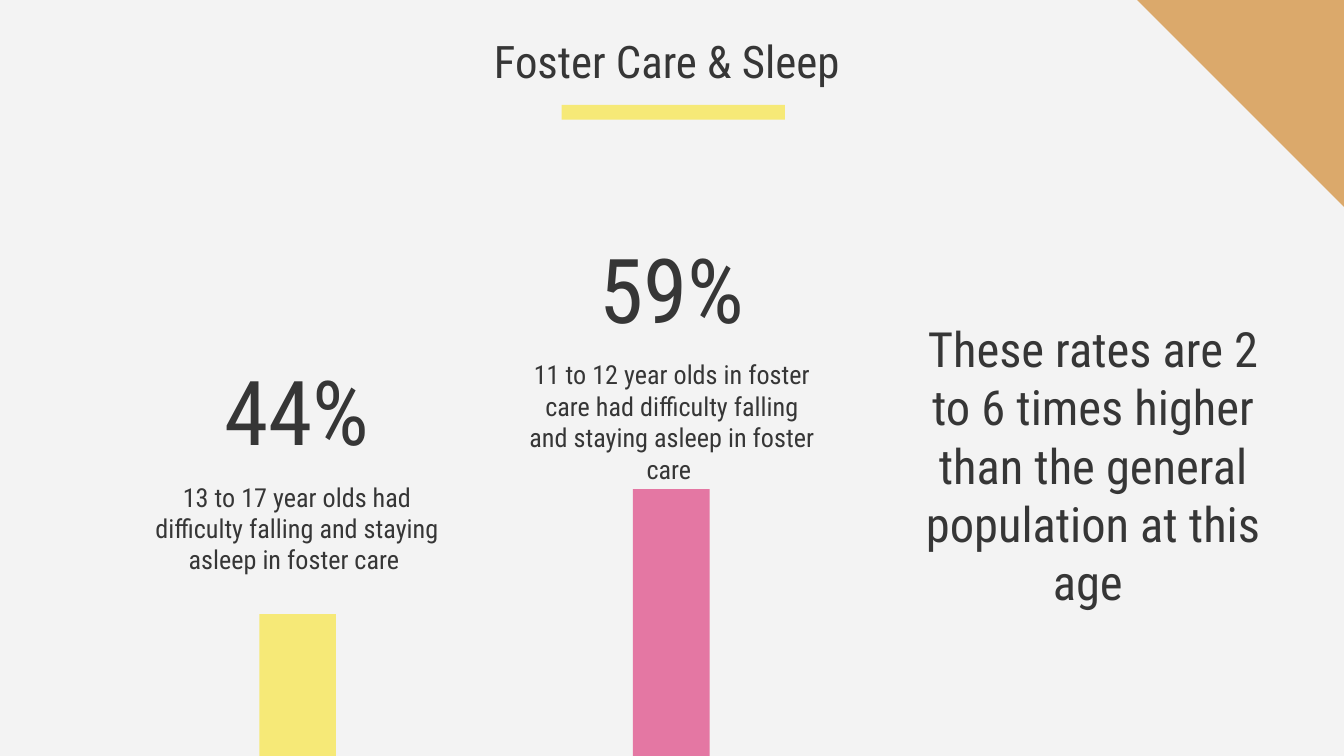
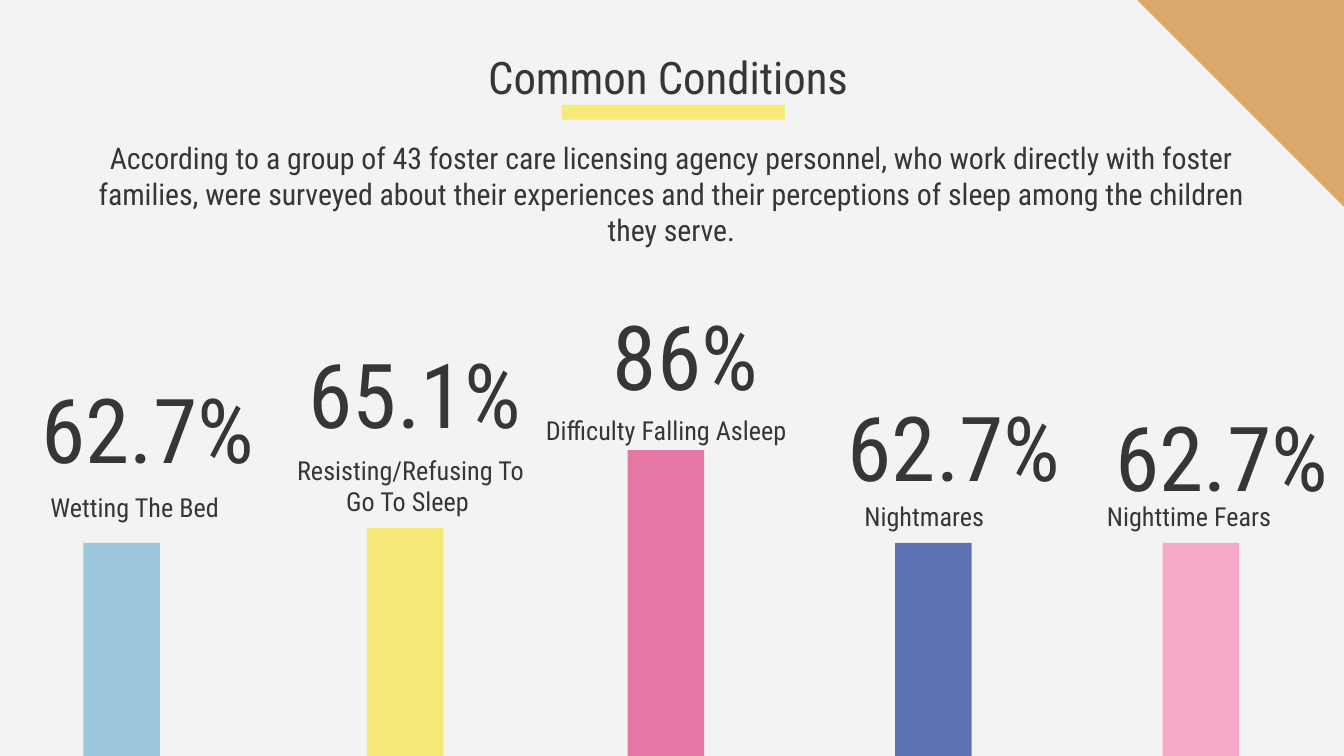
"""Build two slides on sleep difficulties among children in foster care."""
from pptx import Presentation
from pptx.dml.color import RGBColor
from pptx.enum.shapes import MSO_SHAPE
from pptx.enum.text import MSO_ANCHOR, MSO_AUTO_SIZE, PP_ALIGN
from pptx.util import Inches, Pt

WIDTH = 10
HEIGHT = WIDTH * 9 / 16
FONT = "Roboto Condensed"
INK, PAPER, TAN = "363636", "F3F3F3", "DBA96B"
YELLOW, ROSE, SKY, BLUE, PINK = "F6E977", "E477A3", "9CC6DE", "5C72B4", "F7A7C7"
CORNER = 1.54
BAR_WIDTH = 0.57
VALUE_SIZE = (2.34, 1.13)
LABEL_HEIGHT = 0.84

SLIDES = [
    {
        "title": ("Foster Care & Sleep ", 0.34, 0.15),
        "stats": [
            ("44%", 1.04, 2.42,
             "13 to 17 year olds had difficulty falling and staying asleep in foster care ",
             1.04, 3.48, 2.34, 1.93, 4.57, YELLOW),
            ("59%", 3.83, 1.51,
             "11 to 12 year olds in foster care had difficulty falling "
             "and staying asleep in foster care ",
             3.83, 2.57, 2.34, 4.71, 3.64, ROSE),
        ],
        "note": ("These rates are 2 to 6 times higher than the general population at this age ",
                 (6.71, 2.36, 2.85, 2.28), 26, MSO_ANCHOR.BOTTOM),
    },
    {
        "title": ("Common Conditions ", 0.35, 0.27),
        "stats": [
            ("62.7%", -0.07, 2.55, "Wetting The Bed ", -0.03, 3.56, 2.11, 0.62, 4.04, SKY),
            ("65.1%", 1.92, 2.29, "Resisting/Refusing To Go To Sleep ",
             2, 3.28, 2.11, 2.73, 3.93, YELLOW),
            ("86%", 3.93, 2.01, "Difficulty Falling Asleep ",
             3.81, 2.98, 2.34, 4.67, 3.35, ROSE),
            ("62.7%", 5.93, 2.69, "Nightmares ", 5.73, 3.62, 2.34, 6.66, 4.04, BLUE),
            ("62.7%", 7.92, 2.76, "Nighttime Fears ", 7.7, 3.62, 2.34, 8.65, 4.04, PINK),
        ],
        "note": ("According to a group of 43 foster care licensing agency personnel, who work "
                 "directly with foster families, were surveyed about their experiences and "
                 "their perceptions of sleep among the children they serve.",
                 (0.62, 0.94, 8.75, 0.53), 16, MSO_ANCHOR.TOP),
    },
]


def rgb(value):
    return RGBColor.from_string(value)


def add_block(s, kind, box, color, rotation=0):
    sp = s.shapes.add_shape(kind, *map(Inches, box))
    sp.shadow.inherit = False
    sp.fill.solid()
    sp.fill.fore_color.rgb = rgb(color)
    sp.line.fill.background()
    sp.rotation = rotation


def write(s, text, box, size=14, anchor=MSO_ANCHOR.TOP, sp=None):
    sp = sp or s.shapes.add_textbox(*map(Inches, box))
    sp.left, sp.top, sp.width, sp.height = map(Inches, box)
    tf = sp.text_frame
    tf.word_wrap = True
    tf.auto_size = MSO_AUTO_SIZE.NONE
    tf.vertical_anchor = anchor
    tf.margin_left = tf.margin_top = tf.margin_right = tf.margin_bottom = Inches(0.1)
    p = tf.paragraphs[0]
    p.alignment = PP_ALIGN.CENTER
    r = p.add_run()
    r.text = text
    r.font.size = Pt(size)
    r.font.name = FONT
    r.font.color.rgb = rgb(INK)


def add_stat(s, value, value_left, value_top, label, label_left, label_top, label_width,
             bar_left, bar_top, color):
    write(s, value, (value_left, value_top, *VALUE_SIZE), size=48, anchor=MSO_ANCHOR.BOTTOM)
    write(s, label, (label_left, label_top, label_width, LABEL_HEIGHT))
    add_block(s, MSO_SHAPE.RECTANGLE,
              (bar_left, bar_top, BAR_WIDTH, HEIGHT - bar_top), color)


def add_slide(prs, content):
    s = prs.slides.add_slide(prs.slide_layouts[5])
    add_block(s, MSO_SHAPE.RIGHT_TRIANGLE, (WIDTH - CORNER, 0, CORNER, CORNER), TAN, rotation=180)
    add_block(s, MSO_SHAPE.RECTANGLE, (4.18, 0.78, 1.66, 0.11), YELLOW)
    title, left, top = content["title"]
    write(s, title, (left, top, 9.32, 0.63), size=24, sp=s.shapes.title)
    for stat in content["stats"]:
        add_stat(s, *stat)
    note, box, size, anchor = content["note"]
    write(s, note, box, size=size, anchor=anchor)


def main():
    prs = Presentation()
    prs.slide_width, prs.slide_height = Inches(WIDTH), Inches(HEIGHT)
    fill = prs.slide_master.background.fill
    fill.solid()
    fill.fore_color.rgb = rgb(PAPER)
    for content in SLIDES:
        add_slide(prs, content)
    prs.save("out.pptx")


if __name__ == "__main__":
    main()
